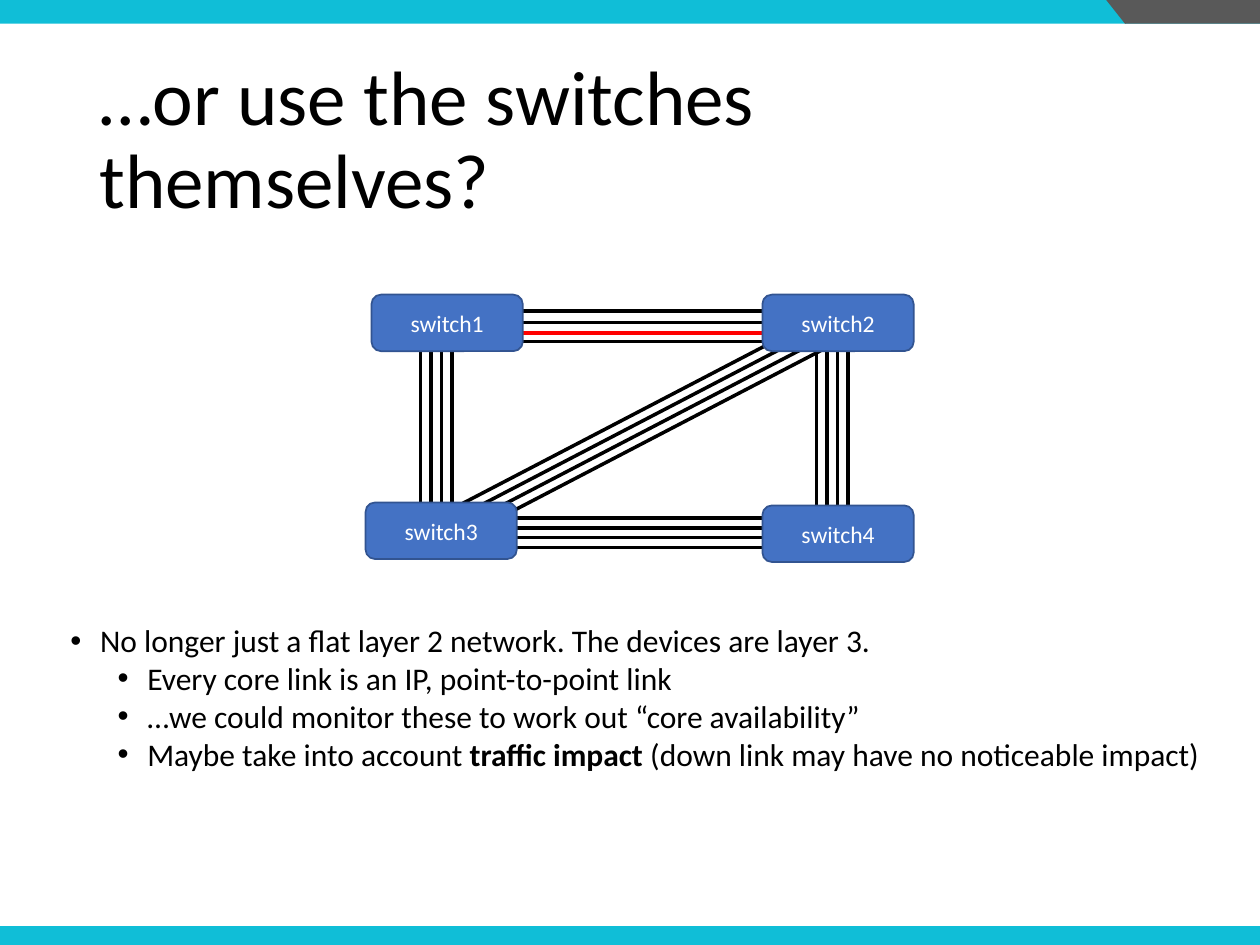
from lxml import etree
from pptx import Presentation
from pptx.dml.color import RGBColor
from pptx.enum.shapes import MSO_CONNECTOR, MSO_SHAPE
from pptx.enum.text import MSO_ANCHOR, MSO_AUTO_SIZE, PP_ALIGN
from pptx.oxml.ns import qn
from pptx.util import Cm, Pt

RECTANGLE = MSO_SHAPE.RECTANGLE
TRIANGLE = MSO_SHAPE.ISOSCELES_TRIANGLE
ROUNDED = MSO_SHAPE.ROUNDED_RECTANGLE
STRAIGHT = MSO_CONNECTOR.STRAIGHT
MIDDLE = MSO_ANCHOR.MIDDLE
LEFT, CENTER = PP_ALIGN.LEFT, PP_ALIGN.CENTER

CYAN = RGBColor(0x10, 0xBE, 0xD7)
GREY = RGBColor(0x59, 0x59, 0x59)
BLUE = RGBColor(0x44, 0x72, 0xC4)
DARK_BLUE = RGBColor(0x32, 0x54, 0x91)
RED = RGBColor(0xFF, 0x00, 0x00)
BLACK = RGBColor(0x00, 0x00, 0x00)
WHITE = RGBColor(0xFF, 0xFF, 0xFF)

FONT = "Calibri"
SLIDE_WIDTH, SLIDE_HEIGHT = 25.4, 19.05
HEADER_HEIGHT, FOOTER_HEIGHT = 0.48, 0.38
SWITCH_WIDTH, SWITCH_HEIGHT = 3.05, 1.14
LINKS_PER_BUNDLE = 4

SWITCHES = [
    ("switch3", 7.37, 10.13),
    ("switch1", 7.49, 5.94),
    ("switch2", 15.37, 5.94),
    ("switch4", 15.37, 10.19),
]

# Start and end of the first link, then the offset from one link to the next
BUNDLES = [
    ((10.41, 10.44), (15.67, 10.44), (0, 0.2)),
    ((8.48, 7.06), (8.48, 10.13), (0.21, 0)),
    ((16.46, 6.91), (16.46, 10.19), (0.21, 0)),
    ((16.33, 6.5), (8.92, 10.36), (0.09, 0.18)),
]

# Heights of the links between switch1 and switch2
TOP_LINKS = [(6.27, BLACK), (6.5, BLACK), (6.71, RED), (6.88, BLACK)]

# Level and (text, bold) runs
POINTS = [
    (0, [("No longer just a flat layer 2 network. The devices are layer 3.", False)]),
    (1, [("Every core link is an IP, point-to-point link", False)]),
    (1, [("…we could monitor these to work out “core availability”", False)]),
    (1, [("Maybe take into account ", False), ("traffic impact", True),
         (" (down link may have no noticeable impact)", False)]),
]


def set_font(paragraph, size, color):
    paragraph.font.name = FONT
    paragraph.font.size = Pt(size)
    paragraph.font.color.rgb = color


def add_filled_shape(slide, kind, left, top, width, height, fill):
    shape = slide.shapes.add_shape(kind, Cm(left), Cm(top), Cm(width), Cm(height))
    shape.shadow.inherit = False
    shape.fill.solid()
    shape.fill.fore_color.rgb = fill
    shape.line.fill.background()
    return shape


def add_page_bars(slide):
    add_filled_shape(slide, RECTANGLE, 0, SLIDE_HEIGHT - FOOTER_HEIGHT,
                     SLIDE_WIDTH, FOOTER_HEIGHT, CYAN)
    add_filled_shape(slide, RECTANGLE, 0, 0, SLIDE_WIDTH, HEADER_HEIGHT, CYAN)
    add_filled_shape(slide, RECTANGLE, 22.68, 0, SLIDE_WIDTH - 22.68,
                     HEADER_HEIGHT, GREY)
    corner = add_filled_shape(slide, TRIANGLE, 22.3, 0, 0.76, HEADER_HEIGHT, GREY)
    corner.rotation = 180


def set_title(slide, text):
    title = slide.shapes.title
    title.left, title.top = Cm(1.75), Cm(1.02)
    title.width, title.height = Cm(21.9), Cm(3.68)
    frame = title.text_frame
    frame.text = text
    frame.word_wrap = True
    frame.auto_size = MSO_AUTO_SIZE.NONE
    frame.vertical_anchor = MIDDLE
    paragraph = frame.paragraphs[0]
    paragraph.alignment = LEFT
    paragraph.line_spacing = 0.9
    set_font(paragraph, 44, BLACK)


def add_link(slide, start, end, color=BLACK):
    link = slide.shapes.add_connector(STRAIGHT, *map(Cm, start + end))
    link.line.color.rgb = color
    link.line.width = Pt(2)
    etree.SubElement(link._element.spPr, qn("a:effectLst"))


def add_bundle(slide, start, end, step):
    for i in range(LINKS_PER_BUNDLE):
        dx, dy = i * step[0], i * step[1]
        add_link(slide, (start[0] + dx, start[1] + dy), (end[0] + dx, end[1] + dy))


def add_switch(slide, label, left, top):
    switch = add_filled_shape(slide, ROUNDED, left, top,
                              SWITCH_WIDTH, SWITCH_HEIGHT, BLUE)
    switch.line.color.rgb = DARK_BLUE
    switch.line.width = Pt(1)
    frame = switch.text_frame
    frame.text = label
    frame.vertical_anchor = MIDDLE
    frame.paragraphs[0].alignment = CENTER
    set_font(frame.paragraphs[0], 13.5, WHITE)


def add_bullet(paragraph, margin, hanging):
    properties = paragraph._p.get_or_add_pPr()
    properties.set("marL", str(Cm(margin)))
    properties.set("indent", str(-Cm(hanging)))
    etree.SubElement(properties, qn("a:buFont"), typeface="Arial")
    etree.SubElement(properties, qn("a:buChar"), char="•")


def add_points(slide):
    box = slide.shapes.add_textbox(Cm(1.17), Cm(12.4), Cm(23.57), Cm(3.33))
    frame = box.text_frame
    frame.word_wrap = True
    for i, (level, runs) in enumerate(POINTS):
        paragraph = frame.add_paragraph() if i else frame.paragraphs[0]
        paragraph.level = level
        add_bullet(paragraph, 0.6 + 0.95 * level, 0.6)
        set_font(paragraph, 18, BLACK)
        for text, bold in runs:
            run = paragraph.add_run()
            run.text = text
            run.font.bold = bold


def main():
    prs = Presentation()
    prs.slide_width, prs.slide_height = Cm(SLIDE_WIDTH), Cm(SLIDE_HEIGHT)
    slide = prs.slides.add_slide(prs.slide_layouts[5])
    add_page_bars(slide)
    set_title(slide, "…or use the switches themselves?")
    add_points(slide)
    for height, color in TOP_LINKS:
        add_link(slide, (10.54, height), (15.37, height), color)
    for bundle in BUNDLES:
        add_bundle(slide, *bundle)
    for switch in SWITCHES:
        add_switch(slide, *switch)
    prs.save("out.pptx")


if __name__ == "__main__":
    main()
